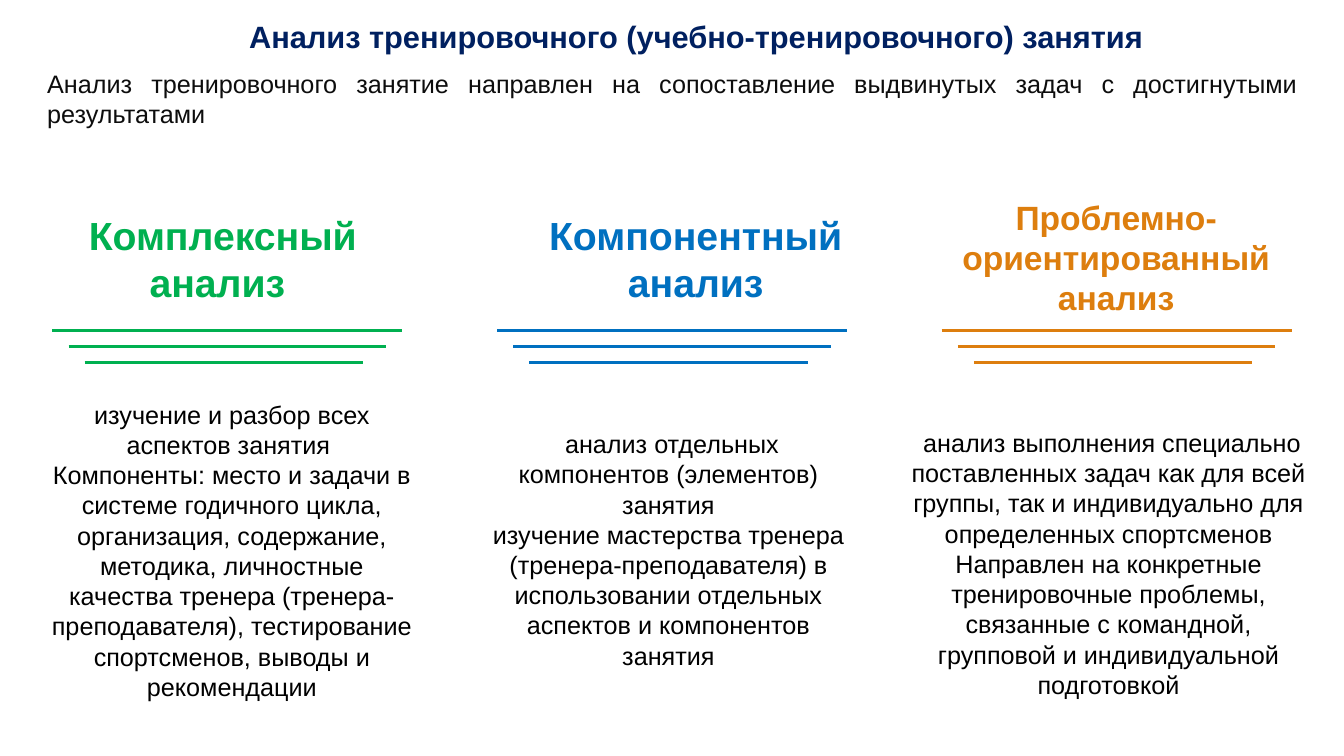
from pptx import Presentation
from pptx.dml.color import RGBColor
from pptx.enum.shapes import MSO_CONNECTOR
from pptx.enum.text import MSO_AUTO_SIZE, PP_ALIGN
from pptx.oxml.ns import qn
from pptx.util import Emu, Pt
from lxml import etree

PX = 9144  # 100 px to the inch
STRAIGHT = MSO_CONNECTOR.STRAIGHT
GROW = MSO_AUTO_SIZE.SHAPE_TO_FIT_TEXT
CENTER, JUSTIFY = PP_ALIGN.CENTER, PP_ALIGN.JUSTIFY

NAVY = RGBColor(0x00, 0x20, 0x60)
INK = RGBColor(0x0D, 0x0D, 0x0D)
BLACK = RGBColor(0x00, 0x00, 0x00)
GREEN = RGBColor(0x00, 0xB0, 0x50)
BLUE = RGBColor(0x00, 0x70, 0xC0)
ORANGE = RGBColor(0xDD, 0x7E, 0x0E)


def px(value):
    return Emu(value * PX)


class SlideBuilder:
    font = "Arial"
    body_size = 18
    rule_width = 2.25

    def __init__(self, slide):
        self.slide = slide

    def text(self, box, paragraphs, size=body_size, color=BLACK, bold=False, align=CENTER):
        frame = self.slide.shapes.add_textbox(*map(px, box)).text_frame
        frame.word_wrap = True
        frame.auto_size = GROW
        frame.text = "\n".join(paragraphs)
        for paragraph in frame.paragraphs:
            paragraph.alignment = align
            for run in paragraph.runs:
                run.font.name = self.font
                run.font.size = Pt(size)
                run.font.bold = bold
                run.font.color.rgb = color

    def rules(self, left, top, color):
        """Three stacked lines, each shorter than the one above."""
        group = self.slide.shapes.add_group_shape()
        for step, length in enumerate((347, 315, 276)):
            x, y = left + 16 * step, top + 16 * step
            rule = group.shapes.add_connector(STRAIGHT, px(x), px(y), px(x + length), px(y))
            rule.line.color.rgb = color
            rule.line.width = Pt(self.rule_width)
            etree.SubElement(rule._element.spPr, qn("a:effectLst"))


# Heading, its box and size, description and its box, for each kind of analysis
ANALYSES = [
    (GREEN, "Комплексный анализ ", (48, 205, 346, 104), 28,
     ["изучение и разбор всех аспектов занятия ",
      "Компоненты: место и задачи в системе годичного цикла, организация, "
      "содержание, методика, личностные качества тренера (тренера-преподавателя), "
      "тестирование спортсменов, выводы и рекомендации"],
     (37, 391, 386, 313)),
    (BLUE, "Компонентный анализ", (493, 205, 394, 104), 28,
     [" анализ отдельных компонентов (элементов) занятия",
      "изучение мастерства тренера (тренера-преподавателя) в использовании "
      "отдельных аспектов и компонентов занятия"],
     (478, 420, 370, 252)),
    (ORANGE, "Проблемно-ориентированный анализ", (906, 190, 402, 131), 24,
     [" анализ выполнения специально поставленных задач как для всей группы, "
      "так и индивидуально для определенных спортсменов",
      "Направлен на конкретные тренировочные проблемы, связанные с командной, "
      "групповой и индивидуальной подготовкой"],
     (888, 419, 423, 283)),
]
RULES_LEFT, RULES_TOP, COLUMN_STEP = 52, 328, 441


def main():
    deck = Presentation()
    deck.slide_width, deck.slide_height = px(1333), px(750)
    builder = SlideBuilder(deck.slides.add_slide(deck.slide_layouts[6]))

    # Title and introduction
    builder.text((84, 13, 1213, 47),
                 ["Анализ тренировочного (учебно-тренировочного) занятия"],
                 size=22, color=NAVY, bold=True)
    builder.text((37, 63, 1260, 71),
                 ["Анализ тренировочного занятие направлен на сопоставление "
                  "выдвинутых задач с достигнутыми результатами"],
                 color=INK, align=JUSTIFY)

    # Three columns
    for column, (color, heading, heading_box, size, details, details_box) in enumerate(ANALYSES):
        builder.text(details_box, details)
        builder.text(heading_box, [heading], size=size, color=color, bold=True)
        builder.rules(RULES_LEFT + COLUMN_STEP * column, RULES_TOP, color)

    deck.save("out.pptx")


if __name__ == "__main__":
    main()
